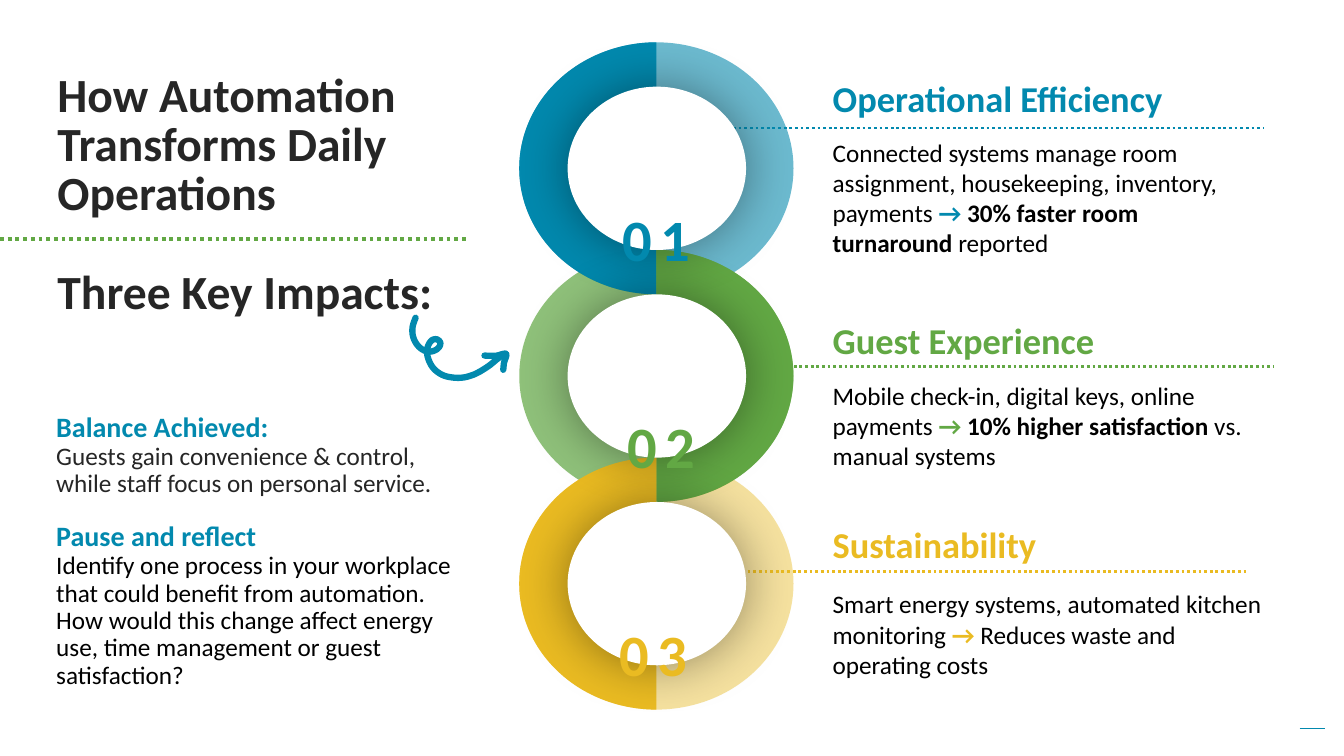
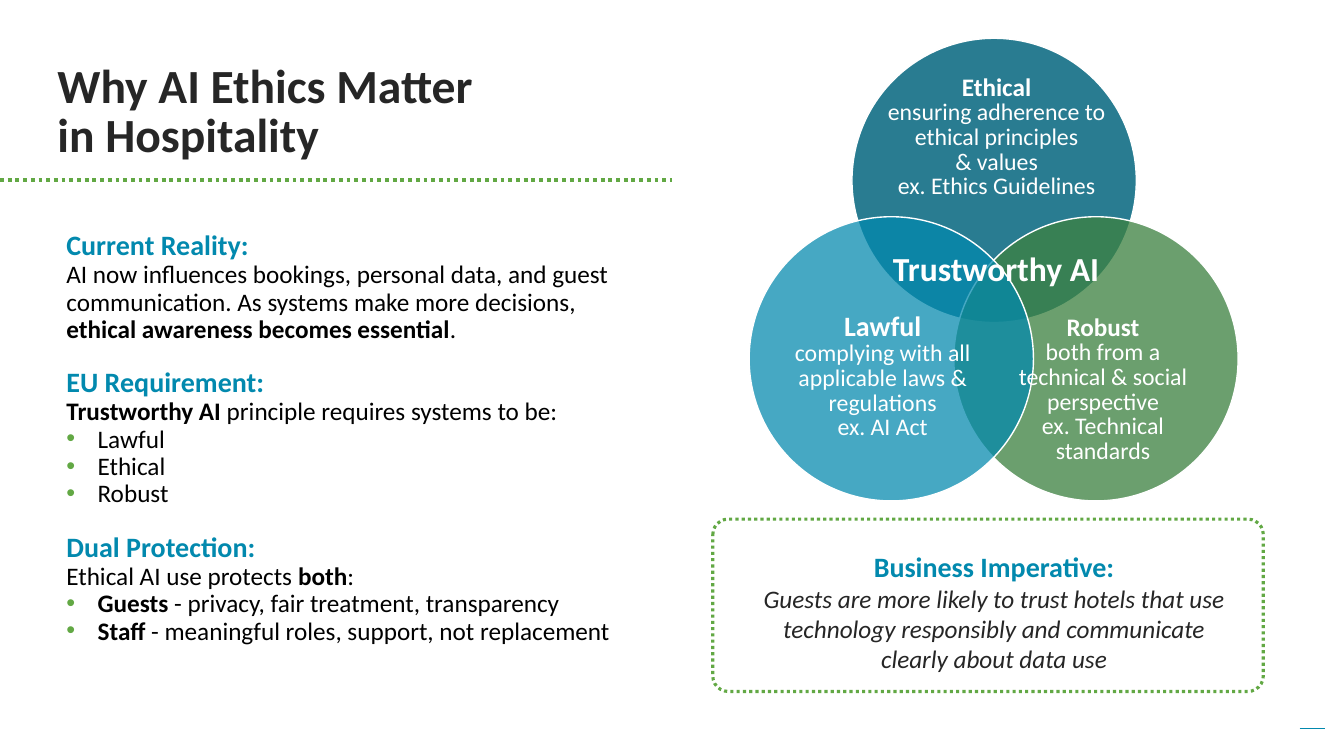
import math
from lxml import etree
from pptx import Presentation
from pptx import util as u
from pptx.dml.color import RGBColor
from pptx.enum import dml, shapes, text
from pptx.oxml import ns

HUE = {"blue": "0289AE", "green": "62A844", "gold": "EABB22", "ink": "262626",
       "black": "000000", "white": "FFFFFF", "teal": "06677F", "leaf": "3D8241"}
FONT = "Calibri"
TIGHT = u.Pt(19.6)
SNUG = u.Pt(17.6)
OVAL = shapes.MSO_SHAPE.OVAL
LEFT, MID = text.PP_ALIGN.LEFT, text.PP_ALIGN.CENTER

# A paragraph is a list of runs; a run is a string or (string, format).
# A dict at its head sets the gap before it or a bullet.
HEAD = {"size": 20, "color": "blue", "bold": True}
BOLD = {"bold": True}
GAP = {"gap": TIGHT}
DOT = {"bullet": True}

TITLE_1 = [["How Automation Transforms Daily Operations"],
           [{"gap": u.Pt(35.2)}, "Three Key Impacts:"]]
TITLE_2 = [["Why AI Ethics Matter in Hospitality"]]

NOTES = [
    [("Balance Achieved:\n", HEAD),
     ("Guests gain convenience & control, while staff focus on personal service.",
      {"color": "ink"})],
    [GAP, ("Pause and reflect\n", HEAD),
     "Identify one process in your workplace that could benefit from automation. "
     "How would this change affect energy use, time management or guest satisfaction?"],
]

IMPACTS = [
    {"name": "Operational Efficiency", "hue": "blue", "alpha": 58, "side": -1,
     "num": "01", "num_x": 5.63, "head_y": 0.67, "body_y": 1.31,
     "rule": (7.27, 12.54, 1.27), "wide": 4.2,
     "before": "Connected systems manage room assignment, housekeeping, inventory, payments ",
     "after": [("30% faster room turnaround ", BOLD), "reported"]},
    {"name": "Guest Experience", "hue": "green", "alpha": 71, "side": 1,
     "num": "02", "num_x": 5.68, "head_y": 3.07, "body_y": 3.72,
     "rule": (7.37, 12.64, 3.64), "wide": 4.71,
     "before": "Mobile check-in, digital keys, online payments ",
     "after": [("10% higher satisfaction ", BOLD), "vs. manual systems"]},
    {"name": "Sustainability", "hue": "gold", "alpha": 43, "side": -1,
     "num": "03", "num_x": 5.6, "head_y": 5.09, "body_y": 5.79,
     "rule": (7.08, 12.36, 5.67), "wide": 4.6,
     "before": "Smart energy systems, automated kitchen monitoring ",
     "after": ["Reduces waste and operating costs"]},
]

CURL = [(4.09, 3.2), (4.07, 3.3), (4.09, 3.4), (4.15, 3.48), (4.23, 3.52),
        (4.3, 3.51), (4.35, 3.47), (4.36, 3.42), (4.32, 3.39), (4.27, 3.41),
        (4.24, 3.48), (4.25, 3.57), (4.31, 3.67), (4.4, 3.73), (4.5, 3.75),
        (4.62, 3.74), (4.74, 3.69), (4.86, 3.6), (4.95, 3.51), (5.02, 3.46)]
BARB = [(4.81, 3.5), (4.92, 3.49), (5.02, 3.46), (5.01, 3.55), (5.01, 3.62)]

ETHICS = [
    [("Current Reality:\n", HEAD),
     "AI now influences bookings, personal data, and guest communication. "
     "As systems make more decisions,"],
    [("ethical awareness becomes essential", BOLD), "."],
    [GAP, ("EU Requirement:\n", HEAD), ("Trustworthy AI", BOLD),
     " principle requires systems to be:"],
    [DOT, "Lawful"],
    [DOT, "Ethical"],
    [DOT, "Robust"],
    [GAP, ("Dual Protection:\n", HEAD), "Ethical AI use protects ", ("both", BOLD), ":"],
    [DOT, ("Guests", BOLD), " - privacy, fair treatment, transparency"],
    [DOT, ("Staff", BOLD), " - meaningful roles, support, not replacement"],
]

IMPERATIVE = [[("Business Imperative:\n", HEAD),
               ("Guests are more likely to trust hotels that use technology responsibly "
                "and communicate clearly about data use",
                {"color": "ink", "italic": True})]]

CIRCLES = [(8.45, 0.38, "teal", 86), (9.46, 2.15, "leaf", 76), (7.43, 2.15, "blue", 73)]
VENN = [
    ((7.63, 3.1, 2.25, 1.36), "Lawful", 20,
     ["complying with all applicable laws & regulations\nex. AI Act"]),
    ((9.88, 3.09, 2.12, 1.62), "Robust", 18,
     ["both from a technical & social perspective\nex. Technical standards"]),
    ((8.58, 0.71, 2.61, 1.36), "Ethical", 18,
     ["ensuring adherence to ethical principles", "& values\nex. Ethics Guidelines"]),
]


def rgb(hue):
    return RGBColor.from_string(HUE[hue])


def sub(node, tag, **attrs):
    return etree.SubElement(node, ns.qn(tag), **attrs)


def write(frame, paras, size=18, color="black", bold=False, italic=False,
          align=LEFT, lead=None, raised=False):
    """Fill a text frame; a run's own format overrides the keywords."""
    frame.word_wrap = True
    frame.vertical_anchor = text.MSO_ANCHOR.TOP
    base = {"size": size, "color": color, "bold": bold, "italic": italic}
    for i, runs in enumerate(paras):
        para = frame.paragraphs[0] if i == 0 else frame.add_paragraph()
        para.alignment = align
        if lead:
            para.line_spacing = lead
        opts = runs[0] if isinstance(runs[0], dict) else {}
        if "gap" in opts:
            para.space_before = opts["gap"]
        if "bullet" in opts:
            props = para._p.get_or_add_pPr()
            props.set("marL", str(u.Inches(0.31)))
            props.set("indent", str(-u.Inches(0.31)))
            sub(sub(props, "a:buClr"), "a:srgbClr", val=HUE["green"])
            sub(props, "a:buFont", typeface="Arial")
            sub(props, "a:buChar", char="•")
        for item in runs[1:] if opts else runs:
            words, extra = (item, {}) if isinstance(item, str) else item
            style = {**base, **extra}
            for j, piece in enumerate(words.split("\n")):
                if j:
                    para.add_line_break()
                if not piece:
                    continue
                run = para.add_run()
                run.text = piece
                font = run.font
                font.name, font.size = FONT, u.Pt(style["size"])
                font.bold, font.italic = style["bold"], style["italic"]
                font.color.rgb = rgb(style["color"])
                if raised:
                    props = run._r.get_or_add_rPr()
                    props.set("baseline", "30000")
                    props.set("spc", "600")


def label(slide, box, paras, **fmt):
    frame = slide.shapes.add_textbox(*map(u.Inches, box)).text_frame
    write(frame, paras, **fmt)
    frame.auto_size = text.MSO_AUTO_SIZE.SHAPE_TO_FIT_TEXT


def paint(shape, fill=None, alpha=100, line=None, width=1, dash=None):
    shape.shadow.inherit = False
    if fill:
        shape.fill.solid()
        shape.fill.fore_color.rgb = rgb(fill)
        if alpha < 100:
            color = shape._element.spPr.find(".//" + ns.qn("a:srgbClr"))
            sub(color, "a:alpha", val=str(alpha * 1000))
    else:
        shape.fill.background()
    if line:
        shape.line.color.rgb = rgb(line)
        shape.line.width = u.Pt(width)
        shape.line.dash_style = dash
    else:
        shape.line.fill.background()
    return shape


def block(slide, kind, box, **look):
    return paint(slide.shapes.add_shape(kind, *map(u.Inches, box)), **look)


def rule(slide, x1, x2, y, hue="green", width=2.75, dash=dml.MSO_LINE.ROUND_DOT):
    line = slide.shapes.add_connector(
        shapes.MSO_CONNECTOR.STRAIGHT, *map(u.Inches, (x1, y, x2, y)))
    line.line.color.rgb = rgb(hue)
    line.line.width = u.Pt(width)
    line.line.dash_style = dash
    sub(line._element.spPr, "a:effectLst")
    return line


def outline(slide, *tracks, close=False):
    first, *rest = [[(u.Inches(x), u.Inches(y)) for x, y in t] for t in tracks]
    pen = slide.shapes.build_freeform(*first[0])
    pen.add_line_segments(first[1:], close=close)
    for track in rest:
        pen.move_to(*track[0])
        pen.add_line_segments(track[1:], close=close)
    return pen.convert_to_shape()


def curve(pts, steps=6):
    """Smooth a track of points with a Catmull-Rom spline."""
    ext = [pts[0], *pts, pts[-1]]
    out = [pts[0]]
    for a, b, c, d in zip(ext, ext[1:], ext[2:], ext[3:]):
        for k in range(1, steps + 1):
            t = k / steps
            out.append(tuple(
                q + t * (r - p) / 2 + t * t * (2 * p - 5 * q + 4 * r - s) / 2
                + t ** 3 * (3 * q - p - 3 * r + s) / 2
                for p, q, r, s in zip(a, b, c, d)))
    return out


def start(deck, title, box, end, y):
    """Add a slide with its title and the dotted rule below it."""
    slide = deck.slides.add_slide(deck.slide_layouts[5])
    head = slide.shapes.title
    head.left, head.top, head.width, head.height = map(u.Inches, box)
    write(head.text_frame, title, size=34, color="ink", bold=True, lead=u.Pt(35.2))
    head.text_frame.auto_size = text.MSO_AUTO_SIZE.NONE
    rule(slide, 0, end, y)
    return slide


def rings(slide):
    left, top, step, rx, ry = 5.15, 0.42, 2.06, 1.36, 1.25
    mid = left + rx
    tops = [top + step * i for i in range(len(IMPACTS))]
    for y, row in zip(tops, IMPACTS):
        block(slide, OVAL, (left, y, 2 * rx, 2 * ry), fill=row["hue"], alpha=row["alpha"])
        rule(slide, *row["rule"], hue=row["hue"], width=2)
    for y, row in zip(tops, IMPACTS):
        arc = [math.radians(a) for a in range(-90, 91, 2)]
        half = [(mid + row["side"] * rx * math.cos(a), y + ry + ry * math.sin(a))
                for a in arc]
        paint(outline(slide, half, close=True), fill=row["hue"])
    for y in tops:
        hole = block(slide, OVAL, (5.63, y + 0.44, 1.77, 1.62), fill="white")
        glow = sub(hole._element.spPr.find(ns.qn("a:effectLst")), "a:outerShdw",
                   blurRad=str(u.Pt(37)), dist="0", dir="0", algn="ctr", rotWithShape="0")
        sub(sub(glow, "a:srgbClr", val=HUE["black"]), "a:alpha", val="40000")
    for y, row in zip(tops, IMPACTS):
        label(slide, (row["num_x"], y + 0.82, 1.76, 1.42), [[row["num"]]], size=72,
              color=row["hue"], bold=True, align=MID, lead=1.5, raised=True)


def impacts(deck):
    slide = start(deck, TITLE_1, (0.47, 0.67, 4.18, 1.22), 4.65, 2.37)
    rings(slide)
    for row in IMPACTS:
        hue = row["hue"]
        label(slide, (8.16, row["head_y"], 4.48, 0.56), [[row["name"]]],
              size=26, color=hue, bold=True, lead=u.Pt(33.8))
        arrow = ("→ ", {"color": hue, "bold": True})
        label(slide, (8.16, row["body_y"], row["wide"], 1.31),
              [[row["before"], arrow, *row["after"]]])
    label(slide, (0.46, 4.07, 4.14, 2.91), NOTES, lead=TIGHT)
    swirl = paint(outline(slide, curve(CURL), curve(BARB)), line="blue", width=4.5)
    swirl.rotation = 6.2
    pen = swirl.line._get_or_add_ln()
    pen.set("cap", "rnd")
    sub(pen, "a:round")
    return slide


def ethics(deck):
    slide = start(deck, TITLE_2, (0.47, 0.58, 4.69, 1.22), 6.67, 1.79)
    label(slide, (0.56, 2.27, 6.51, 4.59), ETHICS, lead=TIGHT)
    label(slide, (7.38, 5.4, 4.96, 1.35), IMPERATIVE, align=MID)
    frame = block(slide, shapes.MSO_SHAPE.ROUNDED_RECTANGLE, (7.07, 5.15, 5.46, 1.71),
                  line="green", width=2.25, dash=dml.MSO_LINE.ROUND_DOT)
    frame.adjustments[0] = 0.09
    for x, y, hue, alpha in CIRCLES:
        block(slide, OVAL, (x, y, 2.82, 2.82), fill=hue, alpha=alpha, line="white")
    for box, name, size, (first, *rest) in VENN:
        paras = [[(name + "\n", {"size": size, "bold": True}), first]]
        label(slide, box, paras + [[more] for more in rest],
              size=17, color="white", align=MID, lead=SNUG)
    label(slide, (8.46, 2.41, 2.84, 0.5), [["Trustworthy AI"]],
          size=24, color="white", bold=True, align=MID)


def main():
    deck = Presentation()
    deck.slide_width, deck.slide_height = u.Inches(13.33), u.Inches(7.5)
    slide = impacts(deck)
    corner = rule(slide, 12.89, 13.14, 7.23, hue="blue", width=0.75, dash=None)
    slide.slide_layout.shapes._spTree.append(corner._element)
    ethics(deck)
    deck.save("out.pptx")


if __name__ == "__main__":
    main()
